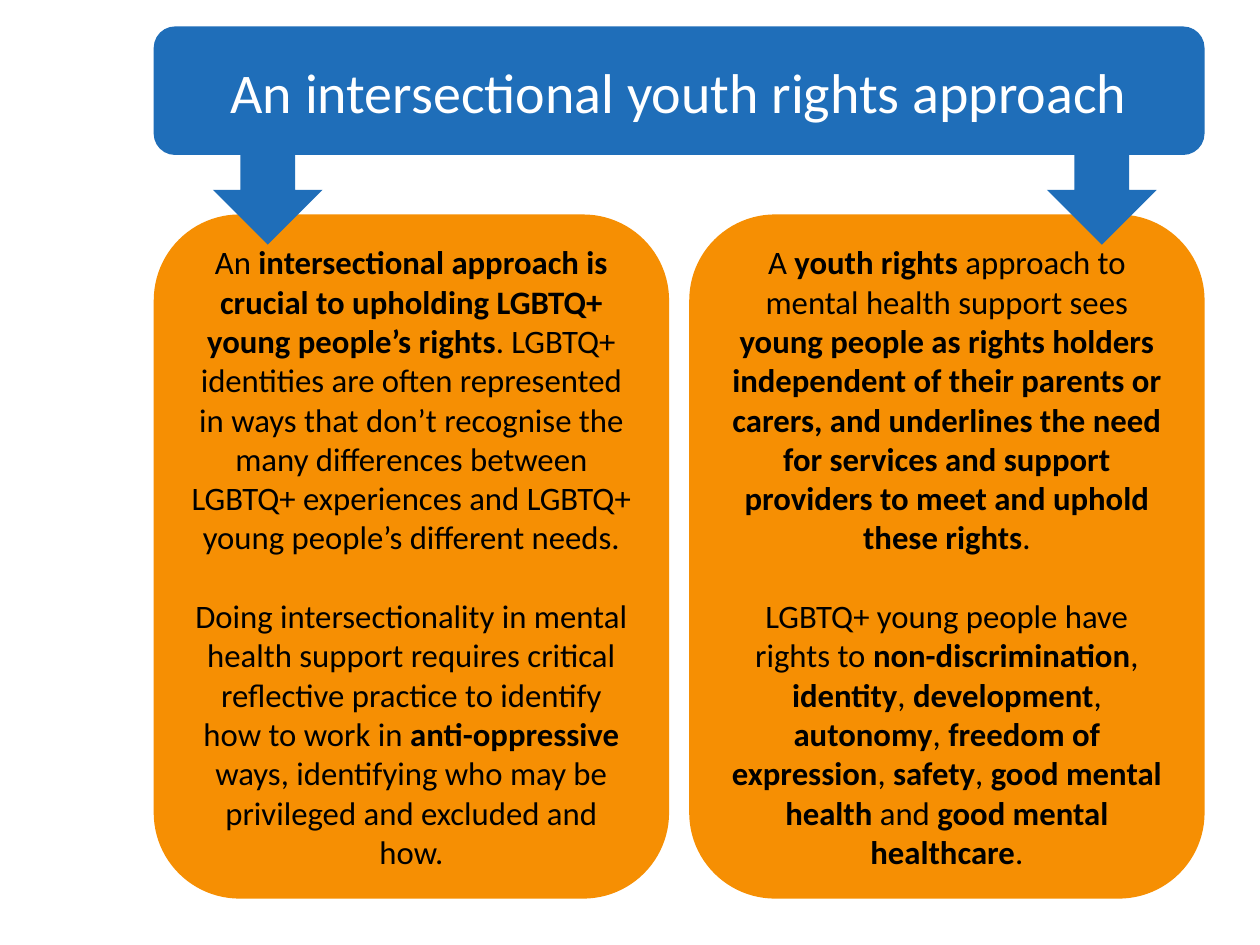
from dataclasses import dataclass

from pptx import Presentation
from pptx.dml.color import RGBColor
from pptx.enum.shapes import MSO_SHAPE as Shape
from pptx.enum.text import MSO_ANCHOR as Anchor, PP_ALIGN as Align
from pptx.util import Inches, Pt


@dataclass(frozen=True)
class Theme:
    font: str = "Calibri"
    blue: str = "1F6EB9"
    orange: str = "F68F03"
    black: str = "000000"
    white: str = "FFFFFF"
    title_size: float = 32
    body_size: float = 18.7
    paragraph_gap: float = 22.5


def write(tf, text, *, size, color, font, gap=0):
    """Write one paragraph per line of text; **marks** enclose bold words."""
    for i, line in enumerate(text.split("\n")):
        p = tf.add_paragraph() if i else tf.paragraphs[0]
        p.alignment = Align.CENTER
        if i:
            p.space_before = Pt(gap)
        for j, part in enumerate(line.split("**")):
            if part:
                r = p.add_run()
                r.text = part
                r.font.name, r.font.size = font, Pt(size)
                r.font.bold = j % 2 == 1
                r.font.color.rgb = RGBColor.from_string(color)


class Deck:
    """Holds the theme and current slide; lengths are shares of its size."""

    def __init__(self, theme, width=10, height=7.5):
        self.theme = theme
        self.prs = Presentation()
        self.prs.slide_width, self.prs.slide_height = Inches(width), Inches(height)
        self.s = self.prs.slides.add_slide(self.prs.slide_layouts[6])

    def block(self, kind, x, y, w, h, fill):
        width, height = self.prs.slide_width, self.prs.slide_height
        sp = self.s.shapes.add_shape(
            kind, int(x * width), int(y * height), int(w * width), int(h * height))
        sp.shadow.inherit = False
        sp.fill.solid()
        sp.fill.fore_color.rgb = RGBColor.from_string(fill)
        sp.line.fill.background()
        return sp

    def card(self, x, y, w, h, text, *, fill, **text_format):
        tf = self.block(Shape.ROUNDED_RECTANGLE, x, y, w, h, fill).text_frame
        tf.word_wrap = True
        tf.vertical_anchor = Anchor.MIDDLE
        tf.margin_left = tf.margin_right = Inches(0.09)
        write(tf, text, font=self.theme.font, **text_format)

    def title(self, x, y, w, h, text):
        t = self.theme
        self.card(x, y, w, h, text, fill=t.blue, size=t.title_size, color=t.white)

    def panel(self, x, y, w, h, text):
        t = self.theme
        self.card(x, y, w, h, text, fill=t.orange, size=t.body_size,
                  color=t.black, gap=t.paragraph_gap)

    def arrow(self, x, y, w, h):
        self.block(Shape.DOWN_ARROW, x, y, w, h, self.theme.blue)


INTERSECTIONAL = (
    "An **intersectional approach is crucial to upholding LGBTQ+ young people’s "
    "rights**. LGBTQ+ identities are often represented in ways that don’t recognise "
    "the many differences between LGBTQ+ experiences and LGBTQ+ young people’s "
    "different needs.\n"
    "Doing intersectionality in mental health support requires critical reflective "
    "practice to identify how to work in **anti-oppressive** ways, identifying who "
    "may be privileged and excluded and how."
)
YOUTH_RIGHTS = (
    "A **youth rights** approach to mental health support sees **young people as "
    "rights holders independent of their parents or carers, and underlines the need "
    "for services and support providers to meet and uphold these rights**.\n"
    "LGBTQ+ young people have rights to **non-discrimination**, **identity**, "
    "**development**, **autonomy**, **freedom of expression**, **safety**, "
    "**good mental health** and **good mental healthcare**."
)


def main():
    deck = Deck(Theme())
    left, panel_w, gutter = 0.122, 0.409, 0.016
    pitch = panel_w + gutter
    for column, text in enumerate((INTERSECTIONAL, YOUTH_RIGHTS)):
        deck.panel(left + column * pitch, 0.227, panel_w, 0.724, text)
    arrow_x = 0.169
    for x in (arrow_x, 1 - arrow_x):
        deck.arrow(x, 0.112, 0.087, 0.147)
    deck.title(left, 0.028, pitch + panel_w, 0.136,
               "An intersectional youth rights approach")
    deck.prs.save("out.pptx")


if __name__ == "__main__":
    main()
